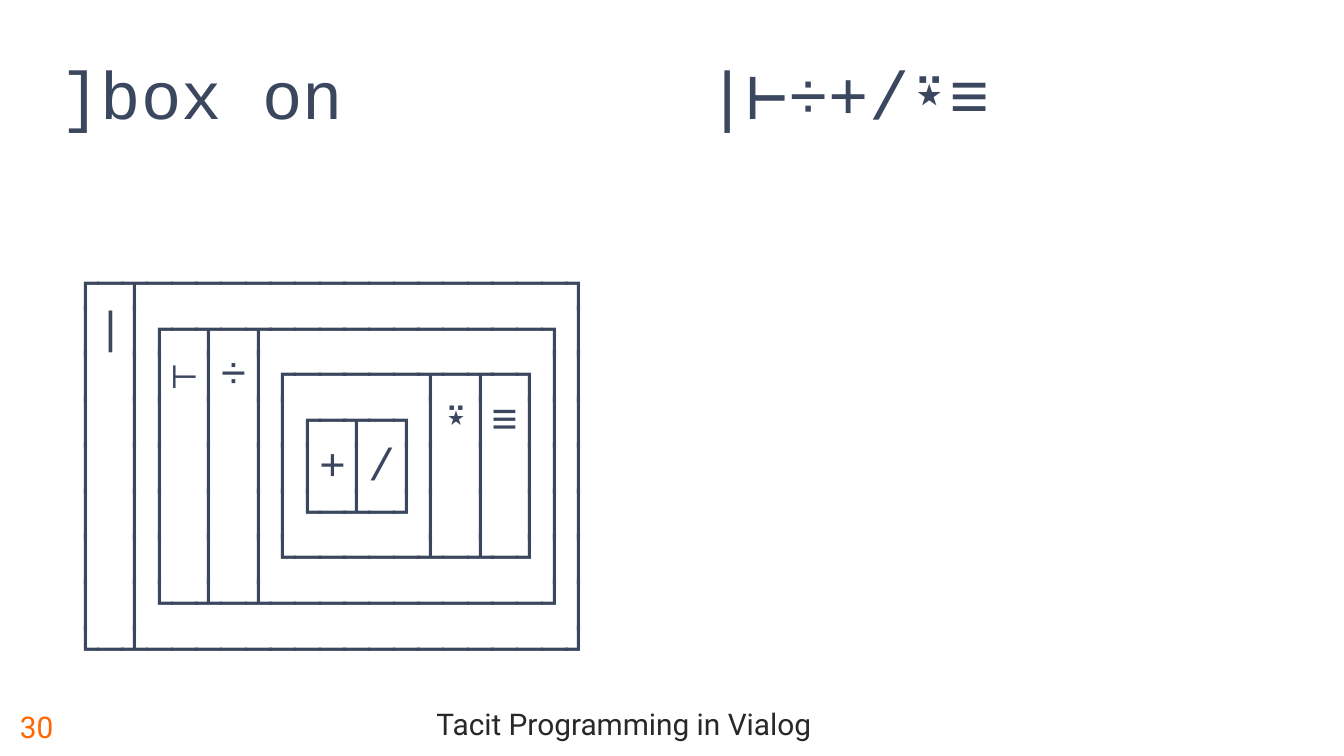
from lxml import etree
from pptx import Presentation
from pptx.dml.color import RGBColor
from pptx.enum import text
from pptx.oxml import ns
from pptx.util import Pt

SLATE = RGBColor(0x3B, 0x47, 0x5E)
INK = RGBColor(0x28, 0x28, 0x28)
ORANGE = RGBColor(0xFF, 0x66, 0x00)
CODE = "Courier New"
PLAIN = "Roboto"

TREE = """\
┌─┬─────────────────┐
│|│┌─┬─┬───────────┐│
│ ││⊢│÷│┌─────┬─┬─┐││
│ ││ │ ││┌─┬─┐│⍣│≡│││
│ ││ │ │││+│/││ │ │││
│ ││ │ ││└─┴─┘│ │ │││
│ ││ │ │└─────┴─┴─┘││
│ │└─┴─┴───────────┘│
└─┴─────────────────┘"""


class Deck:
    def __init__(self, width, height):
        self.prs = Presentation()
        self.prs.slide_width, self.prs.slide_height = Pt(width), Pt(height)
        self.slide = self.prs.slides.add_slide(self.prs.slide_layouts[5])

    def style(self, frame, font, size, color, align, lines=1.0, track=0):
        """Format every run; track is the letter spacing in points."""
        for para in frame.paragraphs:
            para.alignment = align
            para.line_spacing = lines
            for run in para.runs:
                run.font.name = font
                run.font.size = Pt(size)
                run.font.color.rgb = color
                props = run._r.get_or_add_rPr()
                if track:
                    props.set("spc", str(round(track * 100)))
                for tag in ("a:ea", "a:cs"):
                    etree.SubElement(props, ns.qn(tag), typeface=font)

    def title(self, words, box, tab):
        shape = self.slide.shapes.title
        shape.left, shape.top, shape.width, shape.height = map(Pt, box)
        frame = shape.text_frame
        frame.text = words
        frame.auto_size = text.MSO_AUTO_SIZE.NONE
        frame.vertical_anchor = text.MSO_ANCHOR.BOTTOM
        props = frame.paragraphs[0]._p.get_or_add_pPr()
        tabs = etree.SubElement(props, ns.qn("a:tabLst"))
        etree.SubElement(tabs, ns.qn("a:tab"), pos=str(Pt(tab)), algn="r")
        self.style(frame, CODE, 36, SLATE, text.PP_ALIGN.LEFT)

    def label(self, words, box, color, align, lines=1.0):
        frame = self.slide.shapes.add_textbox(*map(Pt, box)).text_frame
        frame.text = words
        frame.word_wrap = True
        frame.vertical_anchor = text.MSO_ANCHOR.MIDDLE
        self.style(frame, PLAIN, 16, color, align, lines)

    def table(self, left, top, cols, rows):
        """Add a table without fills and return it."""
        box = map(Pt, (left, top, sum(cols), sum(rows)))
        table = self.slide.shapes.add_table(len(rows), len(cols), *box).table
        table.first_row = table.horz_banding = False
        for col, width in zip(table.columns, cols):
            col.width = Pt(width)
        for row, height in zip(table.rows, rows):
            row.height = Pt(height)
        for cell in table.iter_cells():
            cell.fill.background()
        return table

    def code(self, cell, words):
        cell.margin_left = cell.margin_right = 0
        cell.margin_top = cell.margin_bottom = 0
        cell.text_frame.text = words
        self.style(cell.text_frame, CODE, 24, SLATE,
                   text.PP_ALIGN.CENTER, lines=0.9, track=-1.2)


def main():
    deck = Deck(720, 405)
    deck.label("Tacit Programming in Vialog", (56, 373.5, 556.5, 31.5),
               INK, text.PP_ALIGN.CENTER, lines=0.8)
    deck.label("30", (3.6, 373.5, 52.5, 31.5), ORANGE, text.PP_ALIGN.LEFT)
    table = deck.table(25.2, 99.4, cols=(306, 173, 192), rows=(40.3, 209))
    deck.code(table.cell(1, 0), TREE)
    deck.title("]box on\t|⊢÷+/⍣≡", (25.2, 21, 512.6, 54), tab=536.4)
    deck.prs.save("out.pptx")


if __name__ == "__main__":
    main()
